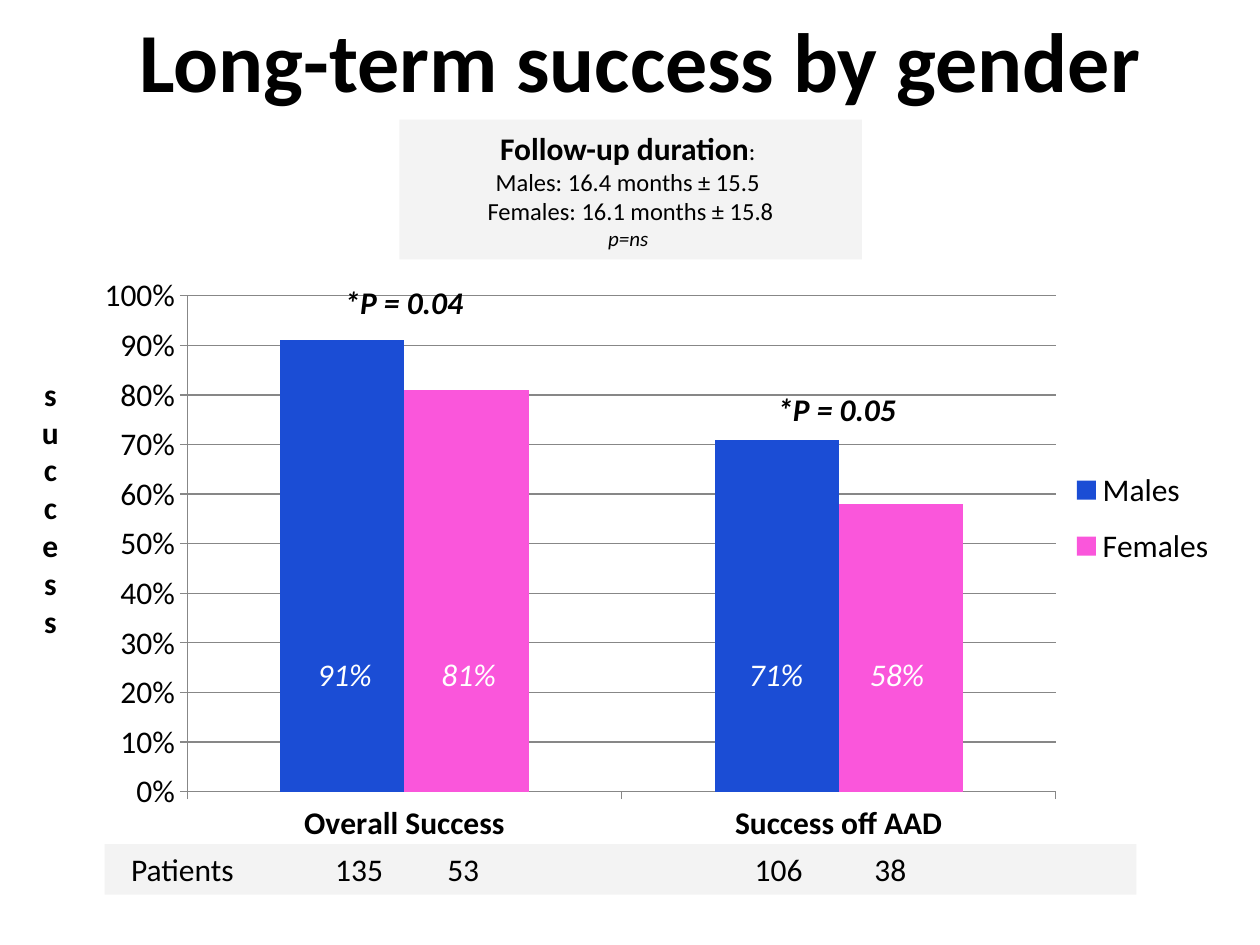
from lxml.etree import SubElement
from pptx import Presentation
from pptx.chart.data import CategoryChartData
from pptx.dml.color import RGBColor
from pptx.enum.chart import XL_CHART_TYPE, XL_LEGEND_POSITION, XL_TICK_MARK
from pptx.enum.shapes import MSO_SHAPE
from pptx.enum.text import MSO_ANCHOR, MSO_AUTO_SIZE, PP_ALIGN
from pptx.oxml import parse_xml
from pptx.oxml.ns import nsdecls, qn
from pptx.util import Inches, Pt

BLACK = RGBColor(0x00, 0x00, 0x00)
WHITE = RGBColor(0xFF, 0xFF, 0xFF)
PANEL_GREY = RGBColor(0xD9, 0xD9, 0xD9)
LINE_GREY = RGBColor(0x87, 0x87, 0x87)
MALE_BLUE = RGBColor(0x1B, 0x4D, 0xD5)
FEMALE_PINK = RGBColor(0xFA, 0x56, 0xDB)

FONT = "Calibri"
SLIDE_W, SLIDE_H = Inches(10), Inches(7.5)
COL, ROW = SLIDE_W / 100, SLIDE_H / 75  # grid of 100 columns by 75 rows


def box(col, row, cols, rows):
    """Turn grid units into left, top, width and height."""
    return int(col * COL), int(row * ROW), int(cols * COL), int(rows * ROW)


def style(font, size=18, color=BLACK, bold=False, italic=False):
    font.name, font.size = FONT, Pt(size)
    font.bold, font.italic = bold, italic
    font.color.rgb = color


def add_title(slide, text):
    title = slide.shapes.title
    title.left, title.top, title.width, title.height = box(5, 0.7, 91.6, 12.3)
    frame = title.text_frame
    frame.text = text
    frame.margin_top = 0
    frame.vertical_anchor = MSO_ANCHOR.TOP
    frame.paragraphs[0].alignment = PP_ALIGN.CENTER
    style(frame.paragraphs[0].runs[0].font, 48, bold=True)


def add_label(slide, area, text, **look):
    label = slide.shapes.add_textbox(*box(*area))
    frame = label.text_frame
    frame.word_wrap = True
    frame.auto_size = MSO_AUTO_SIZE.SHAPE_TO_FIT_TEXT
    frame.text = text
    frame.paragraphs[0].alignment = PP_ALIGN.CENTER
    style(frame.paragraphs[0].runs[0].font, **look)
    return label


def add_panel(slide, area):
    """Add a grey rectangle at 30% opacity and return its text frame."""
    panel = slide.shapes.add_shape(MSO_SHAPE.RECTANGLE, *box(*area))
    panel.shadow.inherit = False
    panel.line.fill.background()
    panel.fill.solid()
    panel.fill.fore_color.rgb = PANEL_GREY
    color = panel.fill._xPr.find(qn("a:solidFill"))[0]
    SubElement(color, qn("a:alpha"), val="30000")
    panel.text_frame.word_wrap = True
    return panel.text_frame


def add_layout(element, x, y, w, h, inner=False):
    """Give a plot area or legend a fixed place, in shares of the chart."""
    target = '<c:layoutTarget val="inner"/>' if inner else ""
    layout = parse_xml(
        f'<c:layout {nsdecls("c")}><c:manualLayout>{target}'
        '<c:xMode val="edge"/><c:yMode val="edge"/>'
        f'<c:x val="{x}"/><c:y val="{y}"/><c:w val="{w}"/><c:h val="{h}"/>'
        "</c:manualLayout></c:layout>")
    for old in element.findall(qn("c:layout")):
        element.remove(old)
    element.insert(0 if inner else 1, layout)


def add_success_chart(slide):
    data = CategoryChartData(number_format="0%")
    data.categories = ["Overall Success", "Success off AAD"]
    data.add_series("Males", [0.91, 0.71])
    data.add_series("Females", [0.81, 0.58])
    chart = slide.shapes.add_chart(
        XL_CHART_TYPE.COLUMN_CLUSTERED, *box(6.6, 21, 91.9, 46.8), data).chart
    chart.has_title = False
    style(chart.font)

    # Columns
    plot = chart.plots[0]
    plot.gap_width, plot.overlap = 150, 0
    plot.vary_by_categories = False
    for series, color in zip(plot.series, (MALE_BLUE, FEMALE_PINK)):
        series.format.fill.solid()
        series.format.fill.fore_color.rgb = color

    # Axes
    shares, groups = chart.value_axis, chart.category_axis
    shares.minimum_scale, shares.maximum_scale = 0, 1
    shares.major_unit = 0.1
    shares.tick_labels.number_format = "0%"
    shares.tick_labels.number_format_is_linked = False
    shares.has_major_gridlines = True
    for axis in (shares, groups):
        axis.major_tick_mark = XL_TICK_MARK.OUTSIDE
        axis.format.line.color.rgb = LINE_GREY
        style(axis.tick_labels.font, bold=axis is groups)
    shares.major_gridlines.format.line.color.rgb = LINE_GREY

    # Legend and fixed places
    chart.has_legend = True
    chart.legend.position = XL_LEGEND_POSITION.RIGHT
    chart.legend.include_in_layout = False
    style(chart.legend.font)
    plot_area = chart._chartSpace.chart.plotArea
    add_layout(plot_area, 0.09, 0.053, 0.75, 0.841, inner=True)
    add_layout(chart.legend._element, 0.84, 0.32, 0.15, 0.22)


def add_patient_row(slide):
    frame = add_panel(slide, (8.3, 67, 81.9, 4))
    frame.margin_left = Inches(0.21)
    frame.vertical_anchor = MSO_ANCHOR.MIDDLE
    frame.text = "Patients\t135\t53\t106\t38"
    counts = frame.paragraphs[0]
    counts.alignment = PP_ALIGN.LEFT
    for run in counts.runs:
        style(run.font)
    stops = SubElement(counts._p.get_or_add_pPr(), qn("a:tabLst"))
    for inches in (1.62, 2.51, 4.95, 5.9):
        SubElement(stops, qn("a:tab"), pos=str(Inches(inches)), algn="l")


def add_follow_up(slide):
    frame = add_panel(slide, (31.7, 9.5, 36.7, 11.1))
    frame.vertical_anchor = MSO_ANCHOR.MIDDLE
    frame.text = ("Follow-up duration\nMales: 16.4 months ± 15.5 \n"
                  "Females: 16.1 months ± 15.8\np=ns ")
    heading, males, females, p_value = frame.paragraphs
    for line in frame.paragraphs:
        line.alignment = PP_ALIGN.CENTER
    style(heading.runs[0].font, bold=True)
    colon = heading.add_run()
    colon.text = ": "
    for run in (colon, males.runs[0], females.runs[0]):
        style(run.font, 14)
    style(p_value.runs[0].font, 12, italic=True)


def main():
    prs = Presentation()
    prs.slide_width, prs.slide_height = SLIDE_W, SLIDE_H
    slide = prs.slides.add_slide(prs.slide_layouts[5])

    add_title(slide, "Long-term success by gender")
    add_success_chart(slide)
    add_patient_row(slide)

    # Significance above each pair of columns
    for col, row, cols, text in ((22.2, 22, 19.7, "*P = 0.04"),
                                 (56.8, 30.5, 19.2, "*P = 0.05")):
        add_label(slide, (col, row, cols, 4), text, bold=True, italic=True)

    # Rates inside the columns
    for col, cols, rate in ((22.2, 10.3, "91%"), (32.5, 9.4, "81%"),
                            (56.8, 9.6, "71%"), (66.4, 9.6, "58%")):
        add_label(slide, (col, 51.5, cols, 4), rate, color=WHITE, italic=True)

    # Stacked value axis caption
    caption = add_label(slide, (1.5, 33.4, 5, 13.7), "success", bold=True)
    caption.text_frame._txBody.bodyPr.set("vert", "wordArtVert")

    add_follow_up(slide)
    prs.save("out.pptx")


if __name__ == "__main__":
    main()
